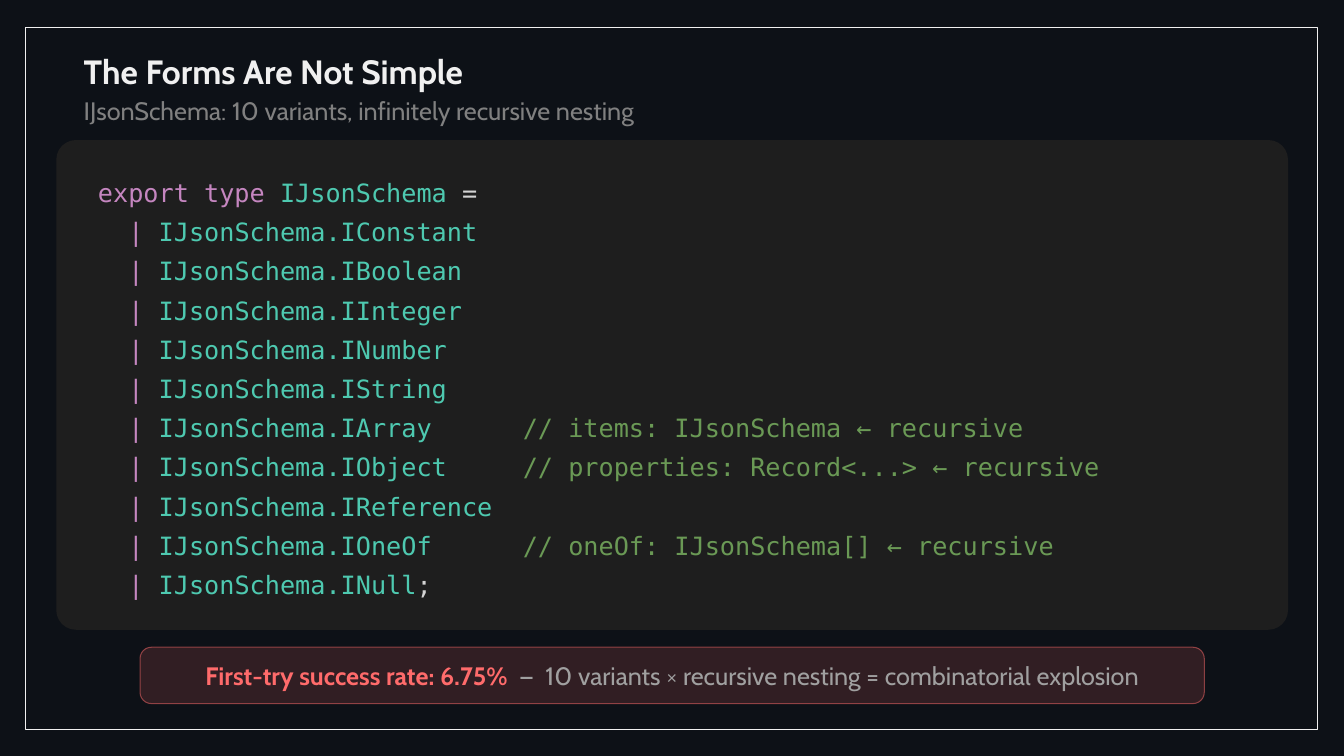
from lxml import etree
from pptx import Presentation
from pptx import util as u
from pptx.dml import color
from pptx.enum import shapes, text
from pptx.oxml import ns

SANS = "Cabin"
MONO = "DejaVu Sans Mono"
KEYWORD = "C586C0"
TYPE = "4EC9B0"
PLAIN = "D4D4D4"
COMMENT = "6A9955"
NIGHT = "0D1117"
WHITE = "F0F0F0"
CORAL = "FF6B6B"

VARIANTS = {
    "IConstant": "",
    "IBoolean": "",
    "IInteger": "",
    "INumber": "",
    "IString": "",
    "IArray": "// items: IJsonSchema ← recursive",
    "IObject": "// properties: Record<...> ← recursive",
    "IReference": "",
    "IOneOf": "// oneOf: IJsonSchema[] ← recursive",
    "INull": "",
}
COMMENT_COLUMN = 24


def paint(target, value):
    target.rgb = color.RGBColor.from_string(value)


def add_span(para, content, size=18, face=SANS, ink=WHITE, bold=False):
    span = para.add_run()
    span.text = content
    span.font.size = u.Pt(size)
    span.font.name = face
    span.font.bold = bold
    paint(span.font.color, ink)


def set_alpha(container, percent):
    for node in container.iter(ns.qn("a:srgbClr")):
        etree.SubElement(node, ns.qn("a:alpha")).set("val", str(percent * 1000))


class SlideBuilder:
    def __init__(self, deck):
        self.slide = deck.slides.add_slide(deck.slide_layouts[1])
        self.slide.background.fill.solid()
        paint(self.slide.background.fill.fore_color, NIGHT)

    def place(self, box, left, top, width, height):
        box.left, box.top = u.Cm(left), u.Cm(top)
        box.width, box.height = u.Cm(width), u.Cm(height)

    def format_frame(self, frame, anchor, inset_x=0, inset_y=0):
        frame.word_wrap = True
        frame.auto_size = text.MSO_AUTO_SIZE.NONE
        frame.vertical_anchor = anchor
        frame.margin_left = frame.margin_right = u.Cm(inset_x)
        frame.margin_top = frame.margin_bottom = u.Cm(inset_y)

    def heading(self, index, area, content, anchor, **style):
        box = self.slide.placeholders[index]
        self.place(box, *area)
        self.format_frame(box.text_frame, anchor)
        para = box.text_frame.paragraphs[0]
        settings = para._p.get_or_add_pPr()
        settings.set("marL", "0")
        settings.set("indent", "0")
        etree.SubElement(settings, ns.qn("a:buNone"))
        para.alignment = text.PP_ALIGN.LEFT
        para.space_before = u.Pt(0)
        add_span(para, content, **style)

    def panel(self, area, fill=None, fill_alpha=100, line=None,
              line_width=1, line_alpha=100, radius=None):
        kind = shapes.MSO_SHAPE.RECTANGLE if radius is None else shapes.MSO_SHAPE.ROUNDED_RECTANGLE
        box = self.slide.shapes.add_shape(kind, *map(u.Cm, area))
        box.shadow.inherit = False
        if radius is not None:
            box.adjustments[0] = radius
        if fill:
            box.fill.solid()
            paint(box.fill.fore_color, fill)
            if fill_alpha < 100:
                set_alpha(box.element.spPr, fill_alpha)
        else:
            box.fill.background()
        if line:
            box.line.width = u.Pt(line_width)
            paint(box.line.color, line)
            if line_alpha < 100:
                set_alpha(box.element.spPr.find(ns.qn("a:ln")), line_alpha)
        else:
            box.line.fill.background()
        return box

    def code(self, area, lines):
        box = self.slide.shapes.add_textbox(*map(u.Cm, area))
        frame = box.text_frame
        self.format_frame(frame, text.MSO_ANCHOR.TOP, 0.36, 0.28)
        for number, line in enumerate(lines):
            para = frame.add_paragraph() if number else frame.paragraphs[0]
            para.line_spacing = u.Pt(28)
            for content, ink in line:
                add_span(para, content, face=MONO, ink=ink)

    def callout(self, area, strong, rest):
        box = self.panel(area, fill=CORAL, fill_alpha=15, line=CORAL,
                         line_width=0.75, line_alpha=50, radius=0.2)
        self.format_frame(box.text_frame, text.MSO_ANCHOR.MIDDLE, 0.25, 0.13)
        para = box.text_frame.paragraphs[0]
        para.alignment = text.PP_ALIGN.CENTER
        add_span(para, strong, ink=CORAL, bold=True)
        add_span(para, rest, ink="A0A0A0")


def schema_lines():
    lines = [[("export type ", KEYWORD), ("IJsonSchema", TYPE), (" =", PLAIN)]]
    for variant, comment in VARIANTS.items():
        name = f"IJsonSchema.{variant}"
        if comment:
            name = name.ljust(COMMENT_COLUMN)
        line = [("  ", PLAIN), ("| ", KEYWORD), (name, TYPE)]
        if comment:
            line.append((comment, COMMENT))
        lines.append(line)
    lines[-1].append((";", PLAIN))
    return lines


def main():
    deck = Presentation()
    deck.slide_width, deck.slide_height = u.Cm(33.87), u.Cm(19.05)
    page = SlideBuilder(deck)
    page.panel((0.64, 0.69, 32.56, 17.7), line=WHITE)
    page.heading(0, (2.11, 0.89, 29.64, 1.42), "The Forms Are Not Simple",
                 text.MSO_ANCHOR.BOTTOM, size=24, bold=True)
    page.heading(1, (2.11, 2.39, 29.64, 0.89),
                 "IJsonSchema: 10 variants, infinitely recursive nesting",
                 text.MSO_ANCHOR.TOP, ink="808080")
    page.panel((1.42, 3.53, 31.04, 12.34), fill="1E1E1E", radius=0.04)
    page.code((2.11, 3.96, 30, 11.63), schema_lines())
    page.callout((3.53, 16.31, 26.82, 1.42), "First-try success rate: 6.75%",
                 "  —  10 variants × recursive nesting = combinatorial explosion")
    deck.save("out.pptx")


if __name__ == "__main__":
    main()
